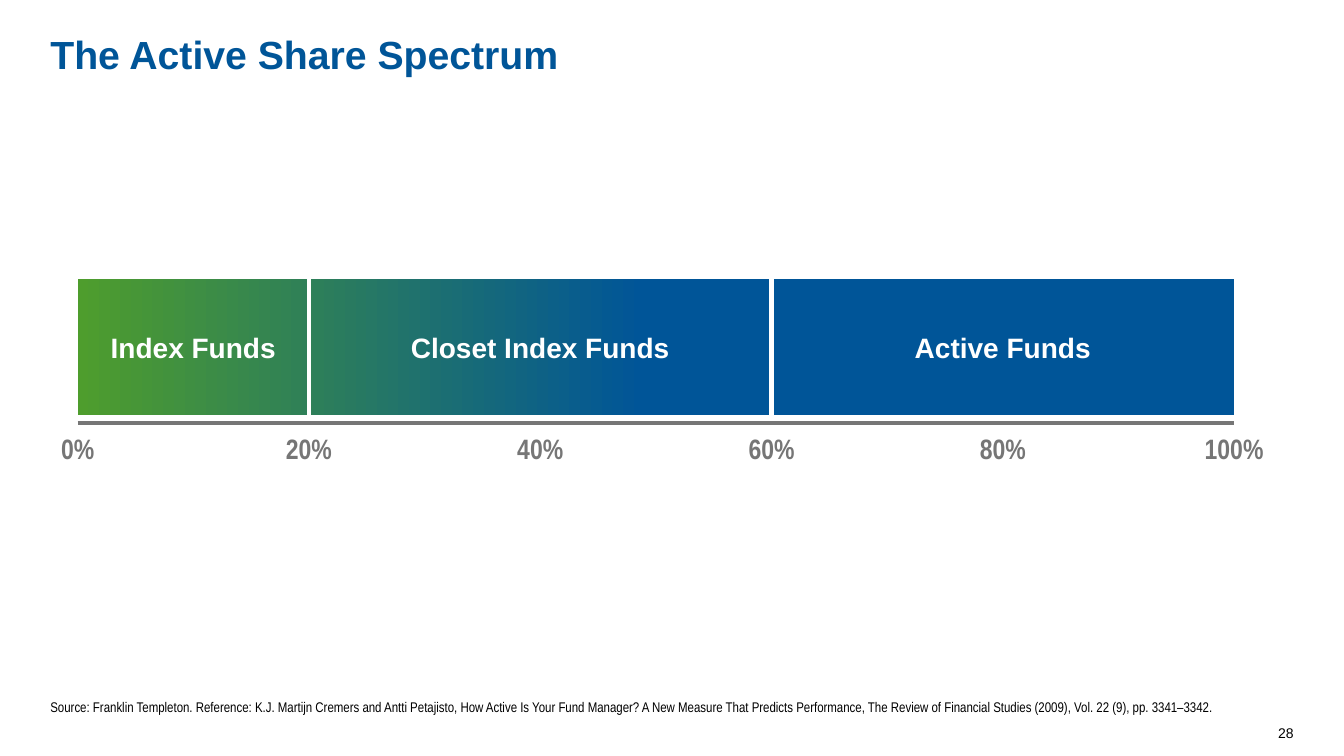
from lxml import etree
from pptx import Presentation
from pptx.dml.color import RGBColor
from pptx.enum import shapes, text
from pptx.oxml import ns
from pptx.util import Inches, Pt

COLORS = {"blue": "005598", "green": "4E9D2D", "gray": "767676",
          "white": "FFFFFF", "black": "000000"}
LEFT, WIDTH = 0.77, 11.47

deck = Presentation()
deck.slide_width, deck.slide_height = Inches(13.33), Inches(7.5)
slide = deck.slides.add_slide(deck.slide_layouts[6])


def add_text(words, x, y, w, h, size=20, font="Arial", color="black",
             bold=False, align="LEFT", anchor="TOP", after=0):
    box = slide.shapes.add_textbox(Inches(x), Inches(y), Inches(w), Inches(h))
    frame = box.text_frame
    frame.word_wrap = True
    frame.margin_left = frame.margin_right = 0
    frame.margin_top = frame.margin_bottom = 0
    frame.vertical_anchor = text.MSO_ANCHOR[anchor]
    para = frame.paragraphs[0]
    para.alignment = text.PP_ALIGN[align]
    para.space_after = Pt(after)
    run = para.add_run()
    run.text = words
    run.font.name, run.font.size, run.font.bold = font, Pt(size), bold
    run.font.color.rgb = RGBColor.from_string(COLORS[color])


def add_line(x1, y1, x2, y2, color):
    line = slide.shapes.add_connector(
        shapes.MSO_CONNECTOR.STRAIGHT,
        Inches(x1), Inches(y1), Inches(x2), Inches(y2))
    line.line.color.rgb = RGBColor.from_string(COLORS[color])
    line.line.width = Pt(3)
    etree.SubElement(line._element.spPr, ns.qn("a:effectLst"))


# Title, source and page number
add_text("The Active Share Spectrum", 0.5, 0.3, 9.5, 1,
         size=28, color="blue", bold=True)
add_text("Source: Franklin Templeton. Reference: K.J. Martijn Cremers and "
         "Antti Petajisto, How Active Is Your Fund Manager? A New Measure "
         "That Predicts Performance, The Review of Financial Studies (2009), "
         "Vol. 22 (9), pp. 3341–3342.", 0.5, 6.93, 12.33, 0.17,
         size=10, font="Arial Narrow", anchor="BOTTOM", after=3)
add_text("28", 12.43, 7.15, 0.4, 0.2, size=10, align="RIGHT", anchor="BOTTOM")

# Percent axis
add_line(LEFT, 4.2, LEFT + WIDTH, 4.2, "gray")
for pct in range(0, 101, 20):
    add_text(f"{pct}%", LEFT + WIDTH * pct / 100 - 0.41, 4.28, 0.82, 0.34,
             font="Arial Narrow", color="gray", bold=True, align="CENTER")

# Spectrum bar
bar = slide.shapes.add_shape(
    shapes.MSO_SHAPE.RECTANGLE,
    Inches(LEFT), Inches(2.77), Inches(WIDTH), Inches(1.35))
bar.shadow.inherit = False
bar.line.fill.background()
bar.fill.gradient()
bar.fill.gradient_angle = 0
for stop, (place, color) in zip(bar.fill.gradient_stops,
                                [(0, "green"), (0.49, "blue")]):
    stop.position = place
    stop.color.rgb = RGBColor.from_string(COLORS[color])

# Fund types, each with its range in percent
for name, low, high in [("Index Funds", 0, 20),
                        ("Closet Index Funds", 20, 60),
                        ("Active Funds", 60, 100)]:
    start = LEFT + WIDTH * low / 100
    span = WIDTH * (high - low) / 100
    if low:
        add_line(start, 2.73, start, 4.14, "white")
    add_text(name, start + 0.15, 3.28, span - 0.3, 0.34, color="white",
             bold=True, align="CENTER", anchor="MIDDLE")

deck.save("out.pptx")
